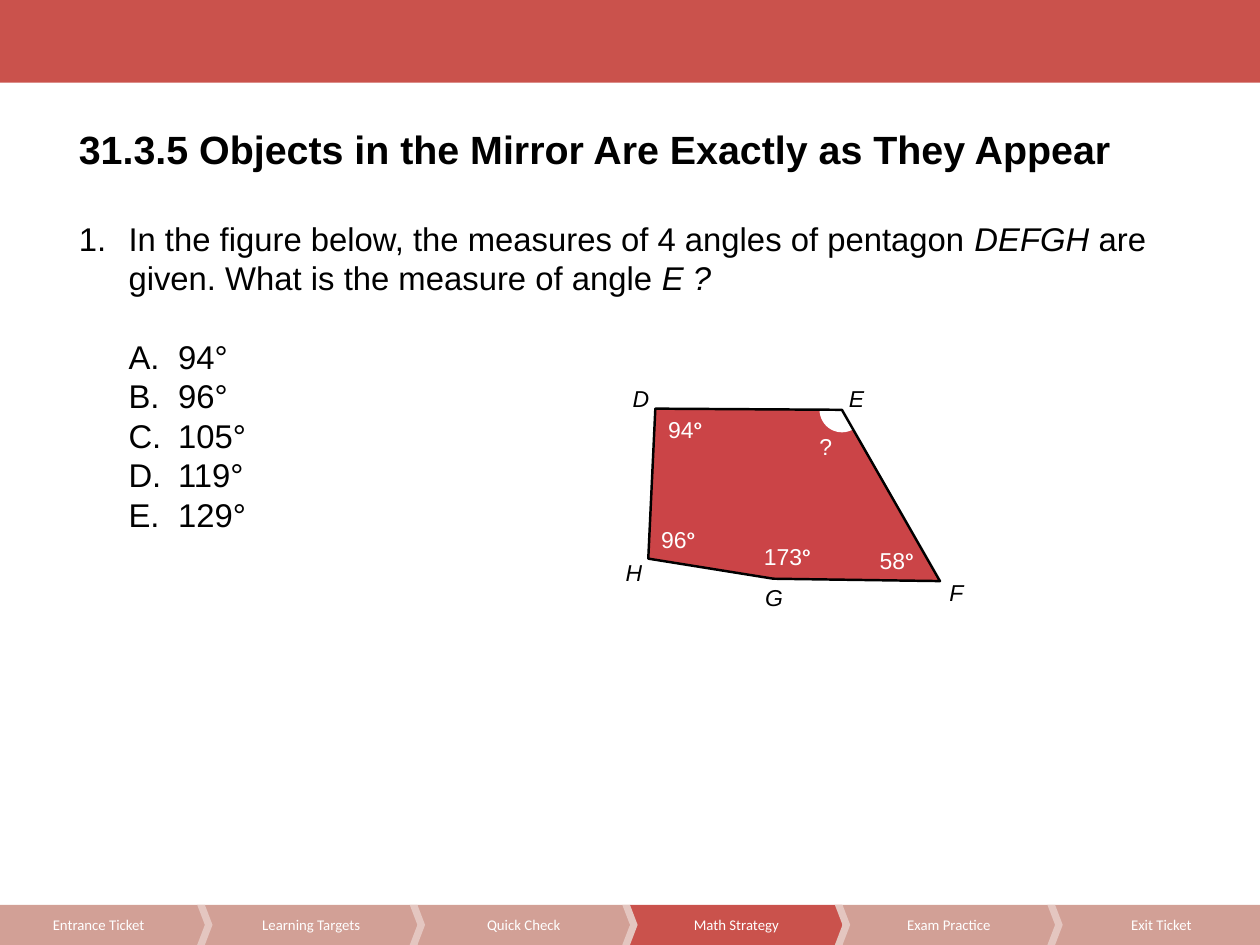
from pptx import Presentation
from pptx.dml.color import RGBColor
from pptx.enum.shapes import MSO_SHAPE
from pptx.enum.text import MSO_ANCHOR, PP_ALIGN
from pptx.util import Inches, Pt

RECT, CHEVRON, OVAL = MSO_SHAPE.RECTANGLE, MSO_SHAPE.CHEVRON, MSO_SHAPE.OVAL
MIDDLE, CENTER = MSO_ANCHOR.MIDDLE, PP_ALIGN.CENTER
RED, PALE, DIVIDER, PENTAGON = "CA524C", "D2A096", "E4C6C0", "CB4447"
BLACK, WHITE = "000000", "FFFFFF"
WIDTH, HEIGHT = 10.67, 8

TITLE = "31.3.5 Objects in the Mirror Are Exactly as They Appear"
QUESTION = [
    ("1.\tIn the figure below, the measures of 4 angles of pentagon ", False),
    ("DEFGH", True),
    (" are given. What is the measure of angle ", False),
    ("E ?", True),
]
CHOICES = ["94°", "96°", "105°", "119°", "129°"]
STEPS = ["Entrance Ticket", "Learning Targets", "Quick Check",
         "Math Strategy", "Exam Practice", "Exit Ticket"]
CURRENT_STEP = "Math Strategy"
CORNERS = [(5.55, 3.46), (7.13, 3.47), (7.96, 4.92), (6.55, 4.9), (5.49, 4.73)]
CORNER_NAMES = [("D", 5.26, 3.21), ("E", 7.09, 3.21), ("F", 7.94, 4.85),
                ("G", 6.38, 4.89), ("H", 5.2, 4.68)]
ANGLES = [("94", 5.56, 3.47), ("58", 7.35, 4.58),
          ("173", 6.37, 4.54), ("96", 5.5, 4.4)]

TITLE_FONT = {"name": "Arial", "size": Pt(24), "bold": True}
BODY_FONT = {"name": "Arial", "size": Pt(20)}
FIGURE_FONT = {"name": "Arial", "size": Pt(14)}
DEGREE_FONT = {"name": "Cambria", "size": Pt(14), "bold": True}
STEP_FONT = {"name": "Calibri", "size": Pt(9)}
INDENT = 0.42


def rgb(value):
    return RGBColor.from_string(value)


def add_run(paragraph, text, font, color=BLACK, italic=False):
    run = paragraph.add_run()
    run.text = text
    for key, value in font.items():
        setattr(run.font, key, value)
    run.font.italic = italic
    run.font.color.rgb = rgb(color)


def paint(shape, fill=None, line=None):
    shape.shadow.inherit = False
    if fill:
        shape.fill.solid()
        shape.fill.fore_color.rgb = rgb(fill)
    else:
        shape.fill.background()
    if line:
        shape.line.color.rgb = rgb(line)
        shape.line.width = Pt(1.5)
    else:
        shape.line.fill.background()


def add_block(slide, kind, box, fill):
    block = slide.shapes.add_shape(kind, *map(Inches, box))
    paint(block, fill)
    return block


def add_text(slide, *box):
    frame = slide.shapes.add_textbox(*map(Inches, box)).text_frame
    frame.word_wrap = True
    return frame


def add_pentagon(slide, fill=None, line=None):
    first, *others = [(Inches(x), Inches(y)) for x, y in CORNERS]
    builder = slide.shapes.build_freeform(*first)
    builder.add_line_segments(others, close=True)
    paint(builder.convert_to_shape(), fill, line)


def hang(paragraph, level):
    paragraph.line_spacing = Pt(24)
    properties = paragraph._p.get_or_add_pPr()
    properties.set("marL", str(Inches(INDENT * level)))
    properties.set("indent", str(-Inches(INDENT)))


def add_problem(slide):
    frame = add_text(slide, 0.57, 1.8, 9.27, 3.05)
    question = frame.paragraphs[0]
    hang(question, 1)
    for text, italic in QUESTION:
        add_run(question, text, BODY_FONT, italic=italic)
    for index, (letter, choice) in enumerate(zip("ABCDE", CHOICES)):
        answer = frame.add_paragraph()
        hang(answer, 2)
        if index == 0:
            answer.space_before = Pt(24)
        add_run(answer, f"{letter}.\t{choice}", BODY_FONT)


def add_navigation(slide):
    step_width, step_height, gap = 1.8, 0.34, 0.13
    left = (WIDTH - step_width * len(STEPS)) / 2
    top = HEIGHT - step_height
    starts = [left + step_width * i for i in range(len(STEPS))]
    for step, start in zip(STEPS, starts):
        fill = RED if step == CURRENT_STEP else PALE
        block = add_block(slide, RECT, (start, top, step_width, step_height), fill)
        frame = block.text_frame
        frame.vertical_anchor = MIDDLE
        frame.paragraphs[0].alignment = CENTER
        add_run(frame.paragraphs[0], step, STEP_FONT, WHITE)
    for start in starts[1:]:
        add_block(slide, CHEVRON, (start - gap / 2, top, gap, step_height), DIVIDER)


def add_figure(slide):
    add_pentagon(slide, fill=PENTAGON)
    arc = 0.38
    corner_x, corner_y = CORNERS[1]
    add_block(slide, OVAL, (corner_x - arc / 2, corner_y - arc / 2, arc, arc), WHITE)
    add_pentagon(slide, line=BLACK)
    for name, x, y in CORNER_NAMES:
        label = add_text(slide, x, y, 0.39, 0.34).paragraphs[0]
        add_run(label, name, FIGURE_FONT, italic=True)
    unknown = add_text(slide, 6.84, 3.61, 0.39, 0.34).paragraphs[0]
    add_run(unknown, "?", FIGURE_FONT, WHITE)
    for angle, x, y in ANGLES:
        label = add_text(slide, x, y, 0.63, 0.34).paragraphs[0]
        add_run(label, angle, FIGURE_FONT, WHITE)
        add_run(label, "°", DEGREE_FONT, WHITE)


def main():
    deck = Presentation()
    deck.slide_width, deck.slide_height = Inches(WIDTH), Inches(HEIGHT)
    slide = deck.slides.add_slide(deck.slide_layouts[6])
    add_block(slide, RECT, (-0.02, -0.03, 10.75, 0.73), RED)
    add_problem(slide)
    add_navigation(slide)
    add_figure(slide)
    title = add_text(slide, 0.57, 1.01, 10.1, 0.5).paragraphs[0]
    add_run(title, TITLE, TITLE_FONT)
    deck.save("out.pptx")


if __name__ == "__main__":
    main()
